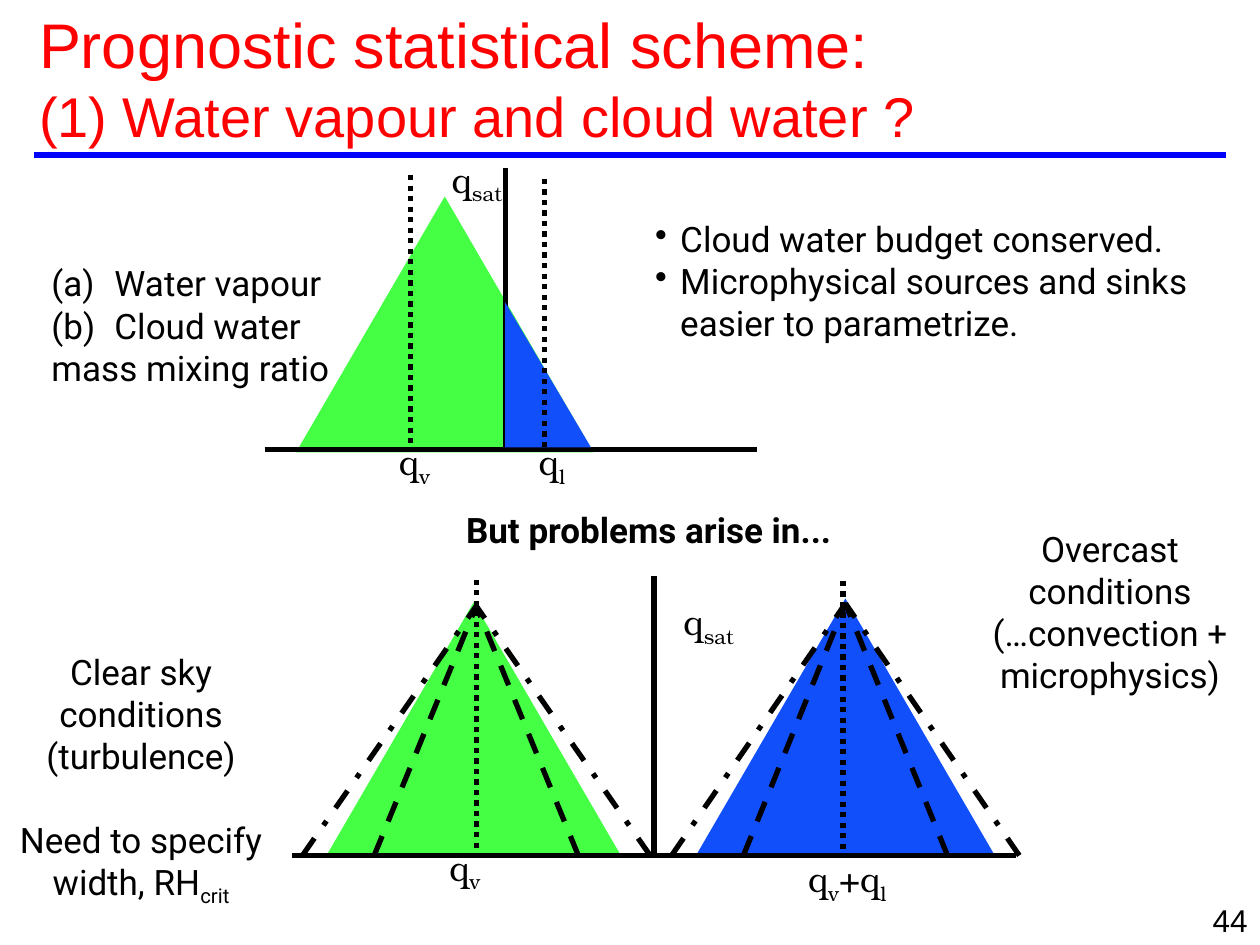
"""Slide on a prognostic statistical cloud scheme and its problem cases."""
from lxml import etree
from pptx import Presentation
from pptx import util as u
from pptx.dml.color import RGBColor
from pptx.enum import dml, shapes, text
from pptx.oxml.ns import qn

COLORS = {"title": "FF0000", "rule": "0000FF", "ink": "000000", "vapour": "45FF45", "water": "114FFB"}
BODY, MATH, HEAD = "Roboto", "TeX Gyre Bonum", "Arial"
DASH = dml.MSO_LINE
SHAPE = shapes.MSO_SHAPE
ALIGN = text.PP_ALIGN

TITLE = [("Prognostic statistical scheme:", 36), ("(1) Water vapour and cloud water ?", 32)]

PDF_W, PDF_H = 2.36, 2.03
PDFS = [
    (SHAPE.ISOSCELES_TRIANGLE, 2.35, 1.56, PDF_W, PDF_H, "vapour"),
    (SHAPE.ISOSCELES_TRIANGLE, 2.58, 4.78, PDF_W, PDF_H, "vapour"),
    (SHAPE.ISOSCELES_TRIANGLE, 5.53, 4.75, PDF_W, PDF_H, "water"),
]
SATURATED_TAIL = (SHAPE.RIGHT_TRIANGLE, 4.01, 2.4, 0.68, 1.15, "water")

AXES = [(2.1, 3.57, 6.01, 3.57), (4.01, 1.33, 4.01, 3.57),
        (2.32, 6.79, 8.06, 6.79), (5.19, 4.57, 5.19, 6.81)]
MEANS = [(3.26, 1.39, 3.56), (4.32, 1.42, 3.58), (3.78, 4.6, 6.76), (6.69, 4.61, 6.78)]
APEXES = [(3.78, 4.81), (6.71, 4.79)]
BASE_Y = 6.79
SPREADS = [(0.81, DASH.DASH), (1.38, DASH.DASH_DOT)]

FORMULAS = [
    ("q_sat_", 3.47, 1.23, 0.63), ("q_v_", 3.06, 3.47, 0.46), ("q_l_", 4.17, 3.47, 0.42),
    ("q_sat_", 5.31, 4.74, 0.63), ("q_v_", 3.46, 6.69, 0.46), ("q_v_+q_l_", 6.3, 6.78, 0.85),
]

NUMBER = ("buAutoNum", "type", "alphaLcParenBoth")
BULLET = ("buChar", "char", "•")
NOTES = [
    ((0.31, 2.03, 3.51, 1.09),
     [("Water vapour", {"bullet": NUMBER, "indent": 0.5}),
      ("Cloud water", {"bullet": NUMBER, "indent": 0.5}),
      ("mass mixing ratio", {"indent": 0.5})]),
    ((5.1, 1.68, 4.61, 1.11),
     [("Cloud water budget conserved.", {"bullet": BULLET, "indent": 0.2}),
      ("Microphysical sources and sinks easier to parametrize.", {"bullet": BULLET, "indent": 0.2})]),
    ((3.6, 3.99, 3.51, 0.43), [("But problems arise in...", {"bold": True})]),
    ((0, 5.11, 2.24, 2.11),
     [("Clear sky conditions", {"align": ALIGN.CENTER}),
      ("(turbulence)", {"align": ALIGN.CENTER}),
      ("Need to specify width, RH_crit_", {"align": ALIGN.CENTER, "before": 24})]),
    ((7.69, 4.14, 2.24, 1.44),
     [(line, {"align": ALIGN.CENTER})
      for line in ("Overcast conditions", "(…convection +", "microphysics)")]),
    ((7.92, 7.1, 2.08, 0.4), [("44", {"align": ALIGN.RIGHT, "size": 18, "font": HEAD})]),
]


def rgb(name):
    return RGBColor.from_string(COLORS[name])


def add_run(p, words, size=20, font=BODY, color="ink", bold=False):
    r = p.add_run()
    r.text = words
    r.font.size, r.font.name, r.font.bold = u.Pt(size), font, bold
    r.font.color.rgb = rgb(color)
    return r


def write(p, words, align=ALIGN.LEFT, indent=0, bullet=None, before=0, **fmt):
    """Fill a paragraph; parts between underscores become subscripts."""
    p.alignment = align
    pPr = p._p.get_or_add_pPr()
    if indent:
        pPr.set("marL", str(u.Inches(indent)))
        pPr.set("indent", str(u.Inches(-indent)))
    if bullet:
        tag, key, value = bullet
        etree.SubElement(pPr, qn("a:" + tag)).set(key, value)
    if before:
        p.space_before = u.Pt(before)
    for i, part in enumerate(words.split("_")):
        if part:
            r = add_run(p, part, **fmt)
            if i % 2:
                r._r.get_or_add_rPr().set("baseline", "-25000")


def add_text(s, box, paragraphs, wrap=True, anchor=text.MSO_ANCHOR.TOP):
    tf = s.shapes.add_textbox(*map(u.Inches, box)).text_frame
    tf.word_wrap, tf.vertical_anchor = wrap, anchor
    for i, (words, fmt) in enumerate(paragraphs):
        write(tf.add_paragraph() if i else tf.paragraphs[0], words, **fmt)


def add_line(s, x1, y1, x2, y2, color="ink", dash=None):
    line = s.shapes.add_connector(shapes.MSO_CONNECTOR.STRAIGHT, *map(u.Inches, (x1, y1, x2, y2)))
    line.line.color.rgb = rgb(color)
    line.line.width = u.Pt(3)
    if dash:
        line.line.dash_style = dash
    etree.SubElement(line._element.spPr, qn("a:effectLst"))


def add_triangle(s, kind, x, y, w, h, color):
    sp = s.shapes.add_shape(kind, *map(u.Inches, (x, y, w, h)))
    sp.shadow.inherit = False
    sp.fill.solid()
    sp.fill.fore_color.rgb = rgb(color)
    sp.line.fill.background()


def add_title(s):
    sp = s.shapes.title
    sp.left, sp.top, sp.width, sp.height = map(u.Inches, (0.21, 0.15, 8, 0.92))
    tf = sp.text_frame
    tf.auto_size, tf.vertical_anchor = text.MSO_AUTO_SIZE.NONE, text.MSO_ANCHOR.MIDDLE
    p = tf.paragraphs[0]
    p.alignment = ALIGN.LEFT
    for i, (words, size) in enumerate(TITLE):
        if i:
            p.add_line_break()
        add_run(p, words, size=size, font=HEAD, color="title")


def main():
    prs = Presentation()
    prs.slide_width, prs.slide_height = u.Inches(10), u.Inches(7.5)
    s = prs.slides.add_slide(prs.slide_layouts[5])
    add_title(s)
    add_line(s, 0.27, 1.23, 9.73, 1.23, color="rule")
    for pdf in PDFS:
        add_triangle(s, *pdf)
    for axis in AXES:
        add_line(s, *axis)
    add_triangle(s, *SATURATED_TAIL)
    for x, top, bottom in MEANS:
        add_line(s, x, top, x, bottom, dash=DASH.ROUND_DOT)
    for x, y in APEXES:
        for spread, dash in SPREADS:
            for side in (-1, 1):
                add_line(s, x + side * spread, BASE_Y, x, y, dash=dash)
    for words, x, y, w in FORMULAS:
        add_text(s, (x, y, w, 0.43), [(words, {"font": MATH, "align": ALIGN.CENTER})],
                 wrap=False, anchor=text.MSO_ANCHOR.MIDDLE)
    for box, paragraphs in NOTES:
        add_text(s, box, paragraphs)
    prs.save("out.pptx")


if __name__ == "__main__":
    main()
